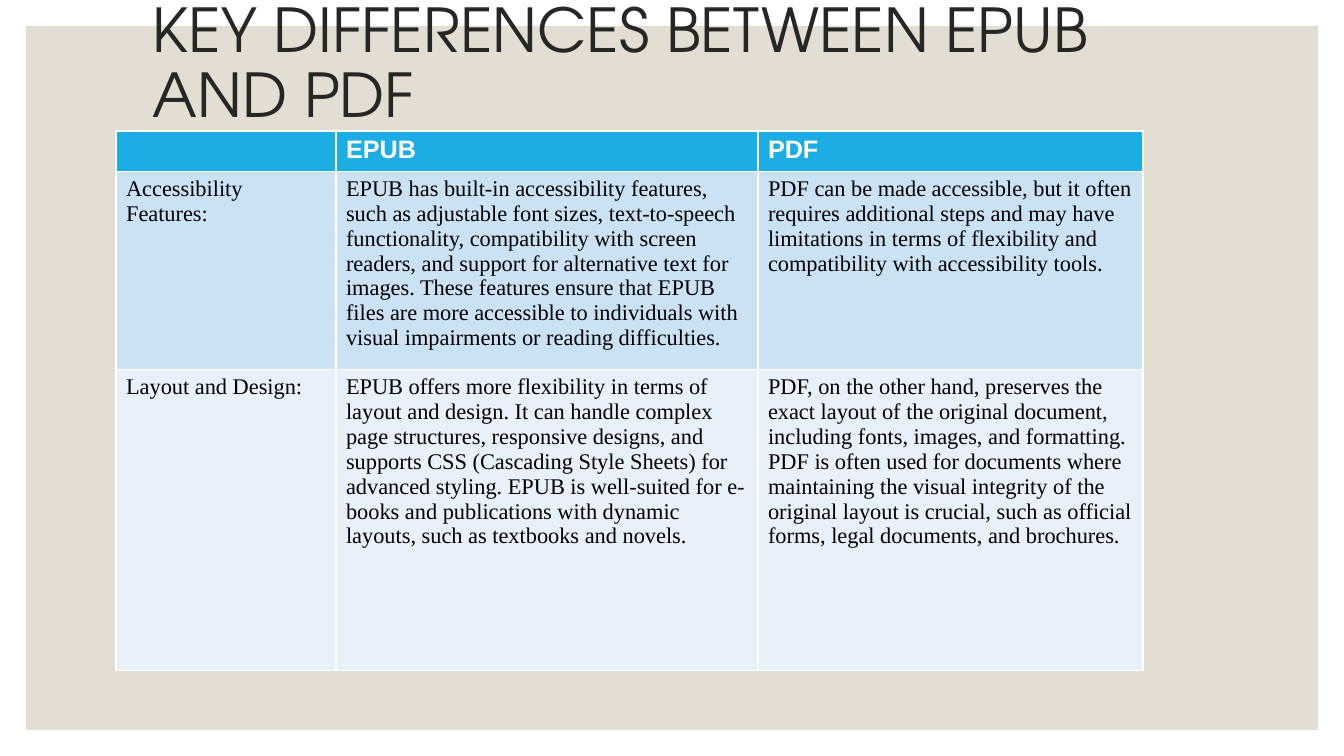
"""Build a slide with a table comparing EPUB and PDF."""
from pptx import Presentation
from pptx.dml.color import RGBColor
from pptx.enum.shapes import MSO_SHAPE
from pptx.enum.text import MSO_ANCHOR
from pptx.util import Pt

SCALE = 914400 / 100.8
COLORS = {"panel": "E3DED1", "title": "262626", "white": "FFFFFF", "head": "1CADE4",
          "band": "CBE2F5", "pale": "E7F1FA", "black": "000000"}


def px(*sizes):
    return [round(size * SCALE) for size in sizes]


def write(frame, text, face, size, color, bold=False):
    run = frame.paragraphs[0].add_run()
    run.text = text
    run.font.name = face
    run.font.size = Pt(size)
    run.font.bold = bold
    run.font.color.rgb = RGBColor.from_string(COLORS[color])


deck = Presentation()
deck.slide_width, deck.slide_height = px(1344, 756)
slide = deck.slides.add_slide(deck.slide_layouts[6])

panel = slide.shapes.add_shape(MSO_SHAPE.RECTANGLE, *px(26, 26, 1292, 704))
panel.shadow.inherit = False
panel.fill.solid()
panel.fill.fore_color.rgb = RGBColor.from_string(COLORS["panel"])
panel.line.fill.background()

title = slide.shapes.add_textbox(*px(143, 0, 1058, 131)).text_frame
title.word_wrap = True
title.vertical_anchor = MSO_ANCHOR.BOTTOM
title.margin_top = title.margin_bottom = 0
title.paragraphs[0].line_spacing = 0.9
write(title, "KEY DIFFERENCES BETWEEN EPUB AND PDF", "TeX Gyre Adventor", 43.2, "title")

rows = [
    ("", "EPUB", "PDF"),
    ("Accessibility Features:",
     "EPUB has built-in accessibility features, such as adjustable font sizes, "
     "text-to-speech functionality, compatibility with screen readers, and support for "
     "alternative text for images. These features ensure that EPUB files are more "
     "accessible to individuals with visual impairments or reading difficulties.",
     "PDF can be made accessible, but it often requires additional steps and may have "
     "limitations in terms of flexibility and compatibility with accessibility tools."),
    ("Layout and Design:",
     "EPUB offers more flexibility in terms of layout and design. It can handle complex "
     "page structures, responsive designs, and supports CSS (Cascading Style Sheets) for "
     "advanced styling. EPUB is well-suited for e-books and publications with dynamic "
     "layouts, such as textbooks and novels.",
     "PDF, on the other hand, preserves the exact layout of the original document, "
     "including fonts, images, and formatting. PDF is often used for documents where "
     "maintaining the visual integrity of the original layout is crucial, such as official "
     "forms, legal documents, and brochures."),
]
widths = px(220, 422, 385)
heights = px(39, 184, 301)
fills = ["head", "band", "pale"]
table = slide.shapes.add_table(3, 3, *px(116, 131), sum(widths), sum(heights)).table
for col, width in zip(table.columns, widths):
    col.width = width
for row, height in zip(table.rows, heights):
    row.height = height

for r, texts in enumerate(rows):
    for c, text in enumerate(texts):
        cell = table.cell(r, c)
        cell.fill.solid()
        cell.fill.fore_color.rgb = RGBColor.from_string(COLORS[fills[r]])
        if not text:
            continue
        if r == 0:
            write(cell.text_frame, text, "Arial", 18, "white", True)
        else:
            write(cell.text_frame, text, "Times New Roman", 16, "black")

deck.save("out.pptx")
